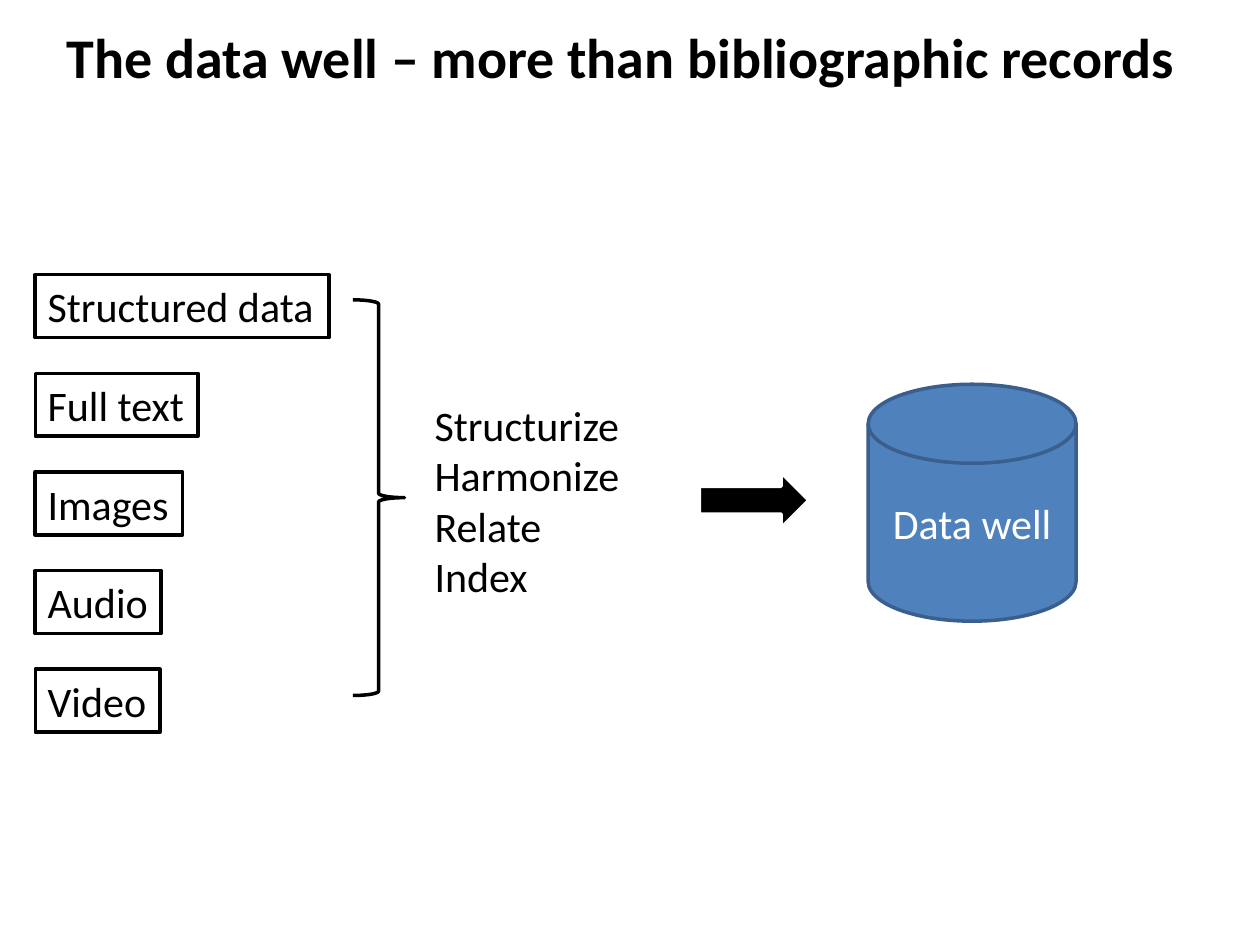
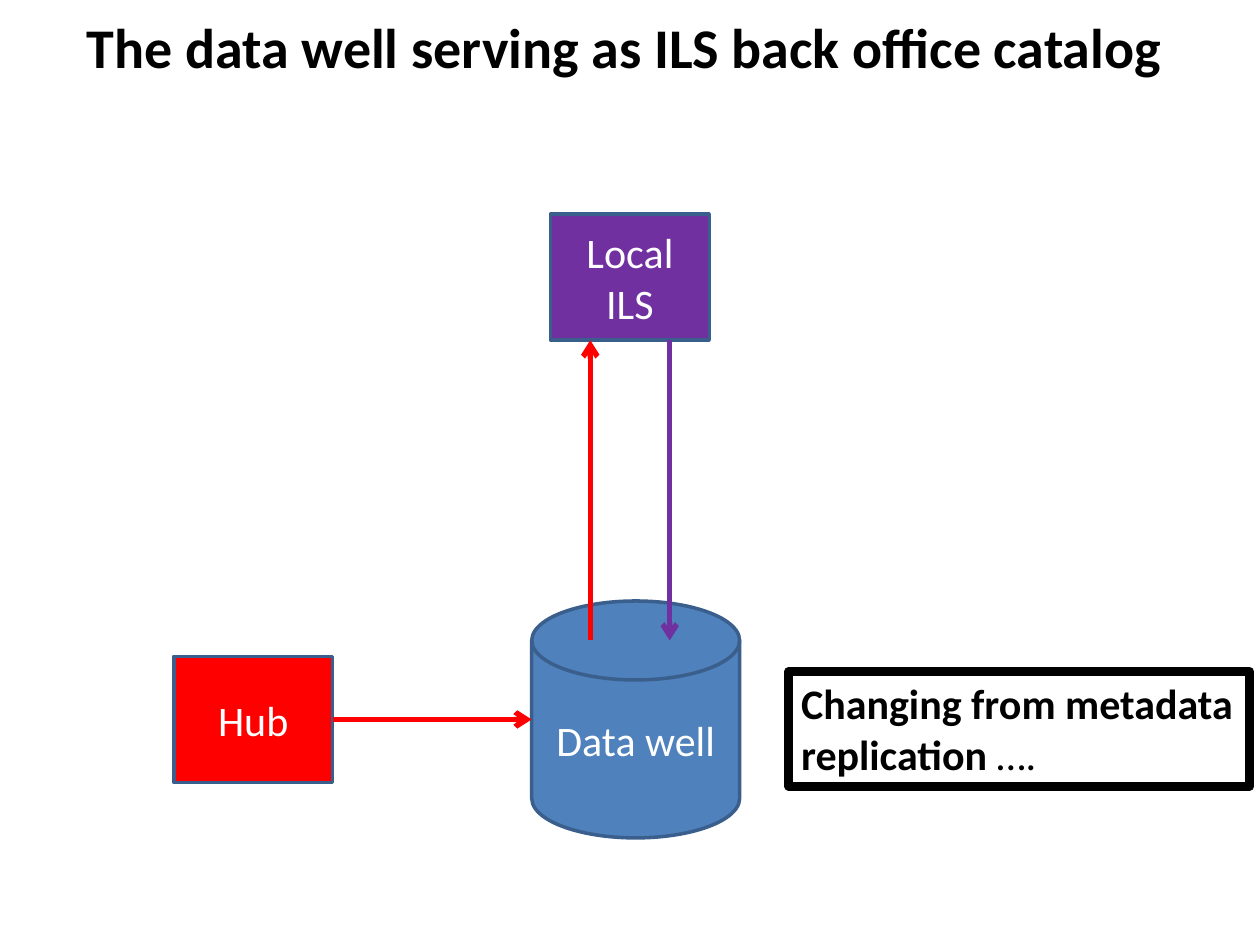
from lxml import etree
from pptx import Presentation
from pptx.dml.color import RGBColor
from pptx.enum.shapes import MSO_CONNECTOR, MSO_SHAPE
from pptx.enum.text import MSO_ANCHOR, MSO_AUTO_SIZE, PP_ALIGN
from pptx.oxml.ns import qn
from pptx.util import Inches, Pt

RECTANGLE = MSO_SHAPE.RECTANGLE
DISK = MSO_SHAPE.FLOWCHART_MAGNETIC_DISK
BRACE = MSO_SHAPE.RIGHT_BRACE
BLOCK_ARROW = MSO_SHAPE.RIGHT_ARROW
STRAIGHT = MSO_CONNECTOR.STRAIGHT
CENTER, LEFT = PP_ALIGN.CENTER, PP_ALIGN.LEFT
MIDDLE, TOP = MSO_ANCHOR.MIDDLE, MSO_ANCHOR.TOP
FIT_SHAPE, FIXED = MSO_AUTO_SIZE.SHAPE_TO_FIT_TEXT, MSO_AUTO_SIZE.NONE
RIGHT_SITE = 3

BLACK, WHITE, RED, PURPLE = "000000", "FFFFFF", "FF0000", "7030A0"
BLUE, OUTLINE = "4F81BD", "3A5F8C"
FONT, TITLE_SIZE, BODY_SIZE = "Calibri", 32, 24
COLUMNS, ROWS = 100, 75
DISK_WIDTH, DISK_HEIGHT = 16.5, 18.8
BLOCK_WIDTH, BLOCK_HEIGHT = 12.6, 10


def color(value):
    return RGBColor.from_string(value)


class Deck:
    """Draws styled elements on the current slide, placed by grid column and row."""

    def __init__(self):
        self.presentation = Presentation()
        self.presentation.slide_width = Inches(10)
        self.presentation.slide_height = Inches(7.5)
        self.column = self.presentation.slide_width / COLUMNS
        self.row = self.presentation.slide_height / ROWS
        self.slide = None

    def place(self, left, top, width, height):
        return (round(left * self.column), round(top * self.row),
                round(width * self.column), round(height * self.row))

    def new_slide(self):
        self.slide = self.presentation.slides.add_slide(self.presentation.slide_layouts[6])

    def style_run(self, run, ink=BLACK, size=BODY_SIZE, bold=False):
        run.font.name = FONT
        run.font.size = Pt(size)
        run.font.bold = bold
        run.font.color.rgb = color(ink)

    def set_text(self, shape, text, align=LEFT, anchor=TOP, wrap=False,
                 fit=FIT_SHAPE, **style):
        frame = shape.text_frame
        frame.text = text
        frame.word_wrap = wrap
        frame.auto_size = fit
        frame.vertical_anchor = anchor
        for paragraph in frame.paragraphs:
            paragraph.alignment = align
            for run in paragraph.runs:
                self.style_run(run, **style)

    def text(self, text, left, top, width, height, **style):
        box = self.slide.shapes.add_textbox(*self.place(left, top, width, height))
        self.set_text(box, text, **style)

    def title(self, text, left, top, width):
        self.text(text, left, top, width, 6.4, size=TITLE_SIZE, bold=True)

    def shape(self, kind, left, top, width, height, fill=None, line=BLACK, weight=2):
        shape = self.slide.shapes.add_shape(kind, *self.place(left, top, width, height))
        shape.shadow.inherit = False
        if fill:
            shape.fill.solid()
            shape.fill.fore_color.rgb = color(fill)
        else:
            shape.fill.background()
        shape.line.color.rgb = color(line)
        shape.line.width = Pt(weight)
        return shape

    def frame(self, text, left, top, width, height, weight=2, bold=False):
        shape = self.shape(RECTANGLE, left, top, width, height, weight=weight)
        self.set_text(shape, text, bold=bold)
        return shape

    def block(self, text, left, top, fill, kind=RECTANGLE,
              width=BLOCK_WIDTH, height=BLOCK_HEIGHT):
        shape = self.shape(kind, left, top, width, height, fill, OUTLINE)
        self.set_text(shape, text, CENTER, MIDDLE, True, FIXED, ink=WHITE)
        return shape

    def data_well(self, left, top):
        self.block("Data well", left, top, BLUE, DISK, DISK_WIDTH, DISK_HEIGHT)

    def arrow(self, start, end, ink, source=None):
        connector = self.slide.shapes.add_connector(STRAIGHT, *self.place(*start, *end))
        if source:
            connector.begin_connect(source, RIGHT_SITE)
        connector.line.color.rgb = color(ink)
        connector.line.width = Pt(3)
        properties = connector._element.spPr
        etree.SubElement(properties.find(qn("a:ln")), qn("a:tailEnd"), type="arrow")
        etree.SubElement(properties, qn("a:effectLst"))


def build_record_types(deck):
    deck.new_slide()
    deck.title("The data well – more than bibliographic records", 4.3, 1.3, 90.7)
    sources = [("Structured data", 23.3), ("Full text", 12.9), ("Images", 11.7),
               ("Audio", 10), ("Video", 9.9)]
    for index, (source, width) in enumerate(sources):
        deck.frame(source, 2.8, 21.8 + 7.83 * index, width, 5)
    deck.shape(BRACE, 28, 23.8, 4.1, 31.4)
    deck.text("Structurize\nHarmonize\nRelate\nIndex", 33.5, 31.2, 20.5, 17.2, wrap=True)
    deck.shape(BLOCK_ARROW, 55.5, 37.5, 8.7, 4.4, BLACK, WHITE)
    deck.data_well(68.9, 30.5)


def build_back_office(deck):
    deck.new_slide()
    well_left, well_top = 42.2, 47.7
    well_middle = well_top + DISK_HEIGHT / 2
    deck.data_well(well_left, well_top)
    deck.title("The data well serving as ILS back office catalog", 5.9, 0.5, 88.3)

    hub_left = 13.8
    hub = deck.block("Hub", hub_left, well_middle - BLOCK_HEIGHT / 2, RED)
    deck.arrow((hub_left + BLOCK_WIDTH, well_middle), (well_left, well_middle), RED, hub)

    local_left, local_top = 43.7, 17
    deck.block("Local ILS", local_left, local_top, PURPLE)
    local_bottom = local_top + BLOCK_HEIGHT
    lid_middle = well_top + DISK_HEIGHT / 6
    up = local_left + BLOCK_WIDTH / 4
    down = local_left + BLOCK_WIDTH * 3 / 4
    deck.arrow((up, lid_middle), (up, local_bottom), RED)
    deck.arrow((down, local_bottom), (down, lid_middle), PURPLE)

    note = deck.frame("Changing from metadata\nreplication ", 62.6, 53.3, 36.6, 9.1, 5, True)
    dots = note.text_frame.paragraphs[-1].add_run()
    dots.text = "…."
    deck.style_run(dots)


def main():
    deck = Deck()
    build_record_types(deck)
    build_back_office(deck)
    deck.presentation.save("out.pptx")


if __name__ == "__main__":
    main()
